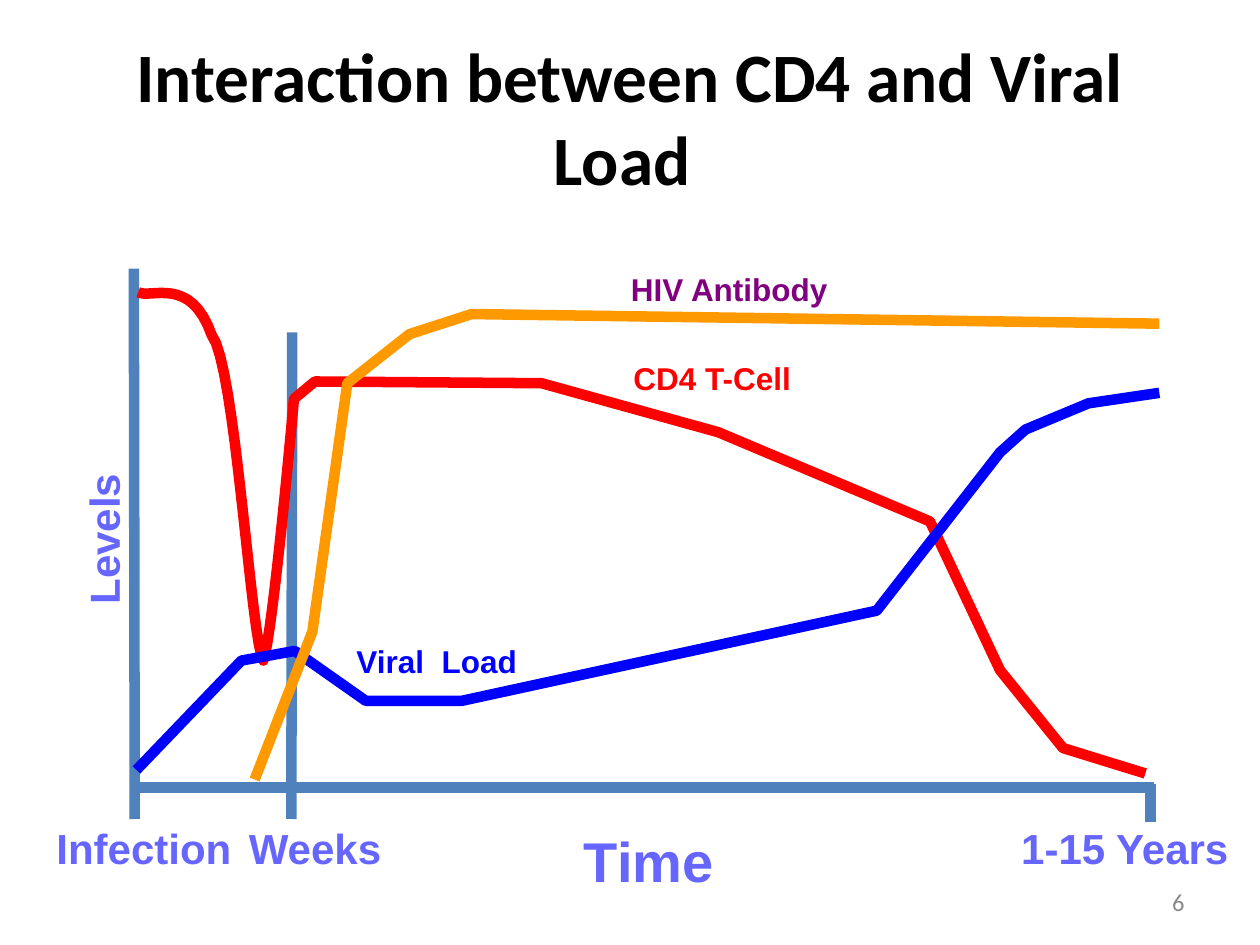
from pptx import Presentation
from pptx.dml.color import RGBColor
from pptx.enum.shapes import MSO_CONNECTOR
from pptx.enum.text import MSO_ANCHOR, MSO_AUTO_SIZE, PP_ALIGN
from pptx.oxml.ns import qn
from pptx.util import Pt

BLACK = RGBColor(0x00, 0x00, 0x00)
GREY = RGBColor(0x89, 0x89, 0x89)
PURPLE = RGBColor(0x80, 0x00, 0x80)
LILAC = RGBColor(0x66, 0x66, 0xFF)
STEEL = RGBColor(0x4F, 0x81, 0xBD)
RED = RGBColor(0xFF, 0x00, 0x00)
BLUE = RGBColor(0x00, 0x00, 0xFF)
ORANGE = RGBColor(0xFF, 0x99, 0x00)


def bezier(start, first, second, end, steps=16):
    """Points along a cubic curve, without its start."""
    points = []
    for step in range(1, steps + 1):
        t = step / steps
        weights = ((1 - t) ** 3, 3 * t * (1 - t) ** 2, 3 * t * t * (1 - t), t ** 3)
        points.append(tuple(
            sum(weight * value for weight, value in zip(weights, values))
            for values in zip(start, first, second, end)))
    return points


class LevelsPage:
    line_width = 6
    label_font = "Arial"
    body_font = "Calibri"

    def __init__(self, deck):
        self.page = deck.slides.add_slide(deck.slide_layouts[5])

    def fill_text(self, box, text, color, size, font, bold=True,
                  align=PP_ALIGN.CENTER, **frame_format):
        frame = box.text_frame
        for name, value in frame_format.items():
            setattr(frame, name, value)
        para = frame.paragraphs[0]
        para.alignment = align
        span = para.add_run()
        span.text = text
        for name, value in {"name": font, "size": Pt(size), "bold": bold}.items():
            setattr(span.font, name, value)
        span.font.color.rgb = color

    def title(self, text, place, size):
        box = self.page.shapes.title
        for name, value in zip(("left", "top", "width", "height"), place):
            setattr(box, name, Pt(value))
        self.fill_text(box, text, BLACK, size, self.body_font, word_wrap=True,
                       auto_size=MSO_AUTO_SIZE.NONE, vertical_anchor=MSO_ANCHOR.MIDDLE)

    def label(self, text, place, color, size, rotation=0, align=PP_ALIGN.CENTER):
        box = self.page.shapes.add_textbox(*map(Pt, place))
        box.rotation = rotation
        self.fill_text(box, text, color, size, self.label_font, align=align,
                       word_wrap=False, auto_size=MSO_AUTO_SIZE.SHAPE_TO_FIT_TEXT)

    def page_number(self, text, place):
        box = self.page.shapes.add_textbox(*map(Pt, place))
        self.fill_text(box, text, GREY, 14, self.body_font, bold=False,
                       align=PP_ALIGN.RIGHT, word_wrap=True,
                       vertical_anchor=MSO_ANCHOR.MIDDLE)

    def stroke(self, line, color):
        line.color.rgb = color
        line.width = Pt(self.line_width)

    def axis(self, *ends):
        axis = self.page.shapes.add_connector(MSO_CONNECTOR.STRAIGHT, *map(Pt, ends))
        self.stroke(axis.line, STEEL)
        properties = axis.element.spPr
        properties.append(properties.makeelement(qn("a:effectLst"), {}))

    def curve(self, points, color):
        start, *rest = [(Pt(x), Pt(y)) for x, y in points]
        builder = self.page.shapes.build_freeform(*start)
        builder.add_line_segments(rest, close=False)
        shape = builder.convert_to_shape()
        shape.shadow.inherit = False
        shape.fill.background()
        self.stroke(shape.line, color)


def main():
    deck = Presentation()
    deck.slide_width, deck.slide_height = Pt(720), Pt(540)
    levels = LevelsPage(deck)
    levels.title("Interaction between CD4 and Viral Load ", (36, 21.6, 648, 90), 39.6)

    # Axes and time marks
    for ends in ((76.5, 153.5, 77, 468), (167, 190, 166.5, 468),
                 (657.5, 448, 657.5, 470), (659.5, 450, 76.5, 450)):
        levels.axis(*ends)

    # Axis labels
    for text, left, width in (("Infection", 25, 114.5), ("Weeks", 134.5, 91),
                              ("1-15 Years", 575.5, 134.5)):
        levels.label(text, (left, 466.5, width, 36), LILAC, 24)
    levels.label("Levels", (14.5, 290, 89, 36), LILAC, 24, rotation=270)
    levels.label("Time", (326, 468.5, 89.5, 45.5), LILAC, 32)

    # CD4 cells: a smooth fall and recovery, then straight stretches
    start, shoulder, dip, recovery = (79, 167), (121, 191.5), (150.5, 377.5), (168, 228)
    cells = [start,
             *bezier(start, (86, 171), (109, 157), shoulder),
             *bezier(shoulder, (134.5, 207.5), (143.5, 367), dip),
             *bezier(dip, (156, 363), recovery, recovery),
             (180, 218), (309.5, 219), (410.5, 247), (531.5, 298),
             (571.5, 383), (607.5, 427.5), (654.5, 442)]
    viral_load = [(78, 440), (138, 377.5), (168.5, 372), (209, 400.5), (264, 400.5),
                  (501, 349), (571.5, 258.5), (586, 245.5), (622, 230.5), (662.5, 224.5)]
    antibody = [(145.5, 445.5), (178.5, 361), (198.5, 219), (234, 191),
                (269.5, 179.5), (662.5, 185)]
    for points, color in ((cells, RED), (viral_load, BLUE), (antibody, ORANGE)):
        levels.curve(points, color)

    # Curve labels
    levels.label("HIV Antibody", (353, 151, 127.5, 29), PURPLE, 18)
    levels.label("CD4 T-Cell", (354, 201.5, 106, 29), RED, 18)
    levels.label("Viral  Load", (196, 363.5, 106.5, 29), BLUE, 18, align=PP_ALIGN.RIGHT)

    levels.page_number("6", (516, 500.5, 168, 29))
    deck.save("out.pptx")


if __name__ == "__main__":
    main()
